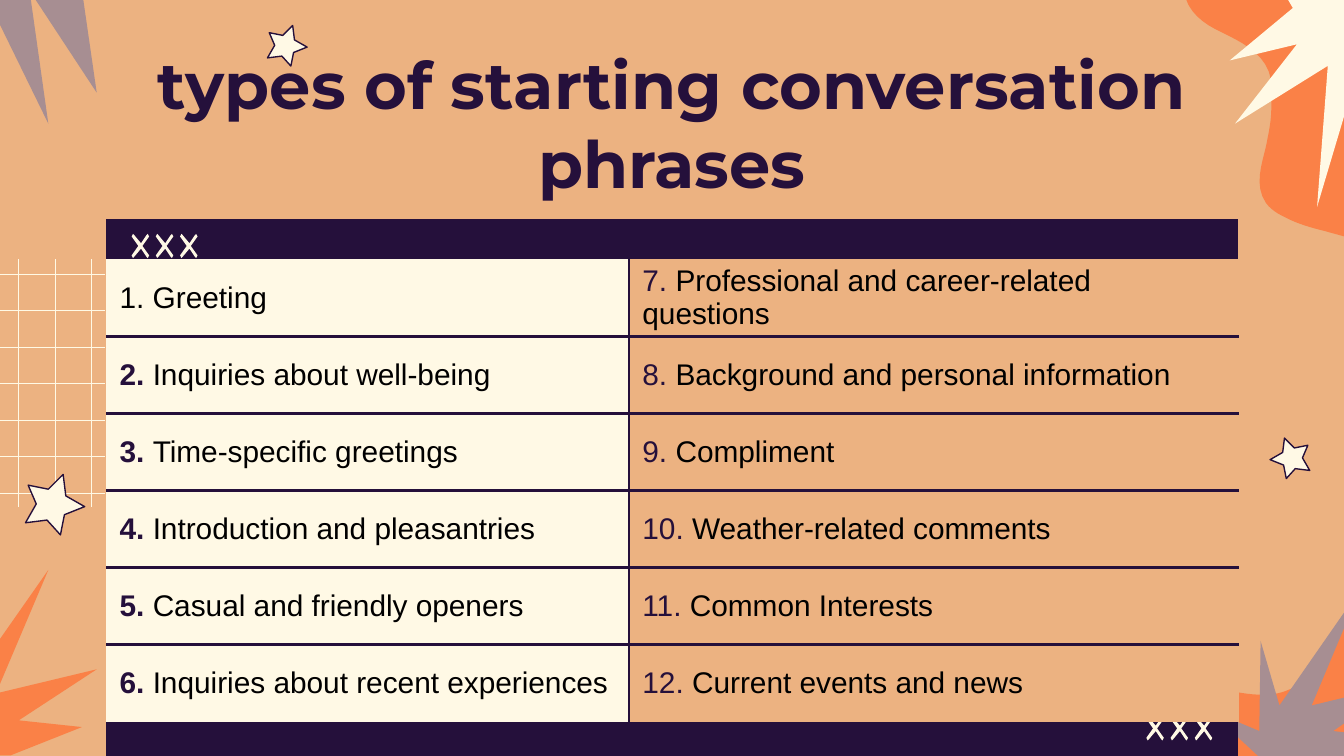
"""Build a slide listing twelve types of conversation starters in a two-column table."""
from dataclasses import dataclass

from lxml import etree
from pptx import Presentation
from pptx.dml.color import RGBColor
from pptx.enum.shapes import MSO_CONNECTOR, MSO_SHAPE
from pptx.enum.text import MSO_ANCHOR, PP_ALIGN
from pptx.oxml.ns import qn
from pptx.util import Inches, Pt

RECTANGLE = MSO_SHAPE.RECTANGLE
STRAIGHT = MSO_CONNECTOR.STRAIGHT
MIDDLE = MSO_ANCHOR.MIDDLE
CENTER = PP_ALIGN.CENTER


@dataclass(frozen=True)
class Theme:
    """Colours, fonts and type sizes of the slide."""
    sand: str = "ECB281"
    cream: str = "FFF9E5"
    orange: str = "FA8147"
    mauve: str = "A78E92"
    plum: str = "25103B"
    black: str = "000000"
    title_font: str = "Montserrat"
    body_font: str = "Arial"
    title_size: int = 35
    body_size: int = 16
    rule: float = 1.5
    outline: float = 0.75
    hairline: float = 0.5


THEME = Theme()
WIDTH = 10
HEIGHT = WIDTH * 9 / 16
PANEL_LEFT, PANEL_TOP = 0.079 * WIDTH, 0.29 * HEIGHT
PANEL_WIDTH, PANEL_HEIGHT = 0.842 * WIDTH, HEIGHT - PANEL_TOP
TABLE_TOP, TABLE_HEIGHT = 1.93, 3.44
COLUMN_WIDTHS = (3.89, 4.54)
CURVE_STEPS = 8

LEFT_PHRASES = ("Greeting", "Inquiries about well-being", "Time-specific greetings",
                "Introduction and pleasantries", "Casual and friendly openers",
                "Inquiries about recent experiences")
RIGHT_PHRASES = ("Professional and career-related questions",
                 "Background and personal information", "Compliment",
                 "Weather-related comments", "Common Interests", "Current events and news")

LOWER_BLOB = [(10.09, 4.59), (9.96, 4.61, 9.88, 4.73, 9.83, 4.84),
              (9.77, 4.96, 9.71, 5.1, 9.57, 5.14), (9.52, 5.16, 9.46, 5.17, 9.4, 5.17),
              (9.3, 5.17, 9.17, 5.15, 9.09, 5.12), (9.02, 5.11, 8.94, 5.09, 8.86, 5.09),
              (8.81, 5.09, 8.76, 5.1, 8.71, 5.13), (8.65, 5.17, 8.62, 5.24, 8.6, 5.3),
              (8.57, 5.37, 8.54, 5.44, 8.52, 5.52), (8.51, 5.59, 8.49, 5.66, 8.47, 5.73),
              (9.95, 5.73), (10.03, 5.73, 10.09, 5.66, 10.09, 5.58)]
UPPER_BLOB = [(8.81, -0.07), (8.83, 0.09, 8.96, 0.18, 9.09, 0.24),
              (9.23, 0.31, 9.38, 0.38, 9.44, 0.53), (9.47, 0.62, 9.46, 0.71, 9.46, 0.8),
              (9.46, 0.9, 9.44, 0.99, 9.42, 1.09), (9.39, 1.22, 9.33, 1.38, 9.42, 1.51),
              (9.47, 1.58, 9.55, 1.61, 9.61, 1.64), (9.7, 1.68, 9.78, 1.7, 9.86, 1.72),
              (9.96, 1.75, 10.06, 1.77, 10.15, 1.81), (10.15, 0.1),
              (10.15, 0, 10.08, -0.07, 9.99, -0.07)]
ORANGE_BURST = [(0.36, 4.24), (-0.2, 5.04), (-0.2, 5.62), (0.08, 5.62), (0.61, 5.41),
                (0.14, 5.36), (0.72, 4.98), (-0.03, 5.16)]
LOWER_MAUVE_BURST = [(10.09, 4.43), (9.52, 5.25), (9.38, 4.77), (9.37, 5.44), (8.99, 5.28),
                     (9.42, 5.68), (9.35, 5.73), (9.87, 5.73), (9.86, 5.68), (10.09, 5.59),
                     (10.09, 5.46), (9.92, 5.44), (10.09, 5.32), (10.09, 5.17),
                     (9.76, 5.25), (10.09, 4.46)]
CREAM_BURST = [(9.55, -0.06), (9.62, 0.06), (9.15, 0.45), (9.65, 0.33), (9.19, 0.92),
               (9.88, 0.49), (9.8, 1.54), (10.14, 0.4), (10.15, 0.41), (10.15, -0.06)]
UPPER_MAUVE_BURST = [(-0.13, -0.28), (-0.21, -0.28, -0.28, -0.21, -0.28, -0.13),
                     (-0.28, 1.23), (-0.25, 1.46), (-0.1, -0.02), (0.36, 0.92),
                     (0.22, -0.07), (0.72, 0.69), (0.58, -0.28)]
STAR = [(0.28, 0), (0.3, 0.16), (0.44, 0.24), (0.29, 0.3), (0.26, 0.45), (0.16, 0.34),
        (0, 0.36), (0.08, 0.22), (0.02, 0.08), (0.17, 0.11)]
CROSS = [(0.01, 0), (0, 0.02), (0.05, 0.09), (0, 0.16), (0.01, 0.18), (0.02, 0.17),
         (0.07, 0.11), (0.11, 0.17), (0.12, 0.18), (0.13, 0.16), (0.08, 0.09),
         (0.13, 0.02), (0.12, 0), (0.11, 0.01), (0.07, 0.07), (0.02, 0.01)]


def rgb(color):
    """Turn a hex string into a colour."""
    return RGBColor.from_string(color)


def flatten(path):
    """Replace each cubic curve of a path by short straight steps."""
    points = []
    for node in path:
        if len(node) == 2:
            points.append(node)
            continue
        controls = [points[-1], node[:2], node[2:4], node[4:]]
        for step in range(1, CURVE_STEPS + 1):
            t = step / CURVE_STEPS
            weights = ((1 - t) ** 3, 3 * t * (1 - t) ** 2, 3 * t * t * (1 - t), t ** 3)
            points.append(tuple(sum(w * c[axis] for w, c in zip(weights, controls))
                                for axis in (0, 1)))
    return points


def paint(shape, fill, line=None):
    """Give a shape a flat fill and an optional outline."""
    shape.shadow.inherit = False
    shape.fill.solid()
    shape.fill.fore_color.rgb = rgb(fill)
    if line:
        shape.line.color.rgb = rgb(line)
        shape.line.width = Pt(THEME.outline)
    else:
        shape.line.fill.background()


def add_outline(slide, path, fill, line=None):
    """Draw a closed outline given in inches."""
    points = [(Inches(x), Inches(y)) for x, y in flatten(path)]
    builder = slide.shapes.build_freeform(*points[0])
    builder.add_line_segments(points[1:], close=True)
    paint(builder.convert_to_shape(), fill, line)


def add_star(slide, left, top, scale, mirrored=False):
    """Draw a tilted star, leaning the other way when mirrored."""
    star = [(left + scale * (0.44 - x if mirrored else x), top + scale * y) for x, y in STAR]
    add_outline(slide, star, THEME.cream, THEME.plum)


def add_crosses(slide, left, top):
    """Draw a row of three crosses."""
    for index in range(3):
        add_outline(slide, [(left + 0.18 * index + x, top + y) for x, y in CROSS], THEME.cream)


def add_hairline(slide, *ends):
    """Draw one thin line of the side grid."""
    hairline = slide.shapes.add_connector(STRAIGHT, *map(Inches, ends))
    hairline.line.color.rgb = rgb(THEME.cream)
    hairline.line.width = Pt(THEME.hairline)
    etree.SubElement(hairline._element.spPr, qn("a:effectLst"))


def add_side_grid(slide):
    """Draw the square grid beside the panel."""
    for column in range(3):
        x = 0.14 + 0.27 * column
        add_hairline(slide, x, 1.93, x, 3.77)
    for row in range(7):
        y = 2.04 + 1.63 * row / 6
        add_hairline(slide, -1.04, y, 0.78, y)


def add_title(slide, text):
    """Write the centred slide title."""
    title = slide.shapes.add_textbox(Inches(PANEL_LEFT), Inches(0.23),
                                     Inches(PANEL_WIDTH), Inches(0.63)).text_frame
    title.word_wrap = True
    title.margin_left = title.margin_right = title.margin_top = title.margin_bottom = Inches(0.1)
    heading = title.paragraphs[0]
    heading.text = text
    heading.alignment = CENTER
    heading.font.name, heading.font.size = THEME.title_font, Pt(THEME.title_size)
    heading.font.bold, heading.font.color.rgb = True, rgb(THEME.plum)


def set_borders(cell, visible):
    """Rule the named sides of a cell and clear the others."""
    properties = cell._tc.get_or_add_tcPr()
    for index, side in enumerate("LRTB"):
        border = etree.Element(qn(f"a:ln{side}"), w=str(Pt(THEME.rule)))
        if side in visible:
            fill = etree.SubElement(border, qn("a:solidFill"))
            etree.SubElement(fill, qn("a:srgbClr"), val=THEME.plum)
        else:
            etree.SubElement(border, qn("a:noFill"))
        properties.insert(index, border)


def fill_cell(cell, number, phrase, fill, number_color, bold):
    """Write a numbered phrase into a table cell."""
    cell.fill.solid()
    cell.fill.fore_color.rgb = rgb(fill)
    cell.vertical_anchor = MIDDLE
    cell.margin_left = cell.margin_right = Inches(0.1)
    cell.margin_top = cell.margin_bottom = 0
    entry = cell.text_frame.paragraphs[0]
    entry.font.name, entry.font.size = THEME.body_font, Pt(THEME.body_size)
    for text, color, weight in ((f"{number}. ", number_color, bold),
                                (phrase, THEME.black, False)):
        run = entry.add_run()
        run.text = text
        run.font.bold, run.font.color.rgb = weight, rgb(color)


def add_phrase_table(slide):
    """Lay out the twelve phrases in two columns."""
    rows = len(LEFT_PHRASES)
    table = slide.shapes.add_table(rows, 2, Inches(PANEL_LEFT), Inches(TABLE_TOP),
                                   Inches(sum(COLUMN_WIDTHS)), Inches(TABLE_HEIGHT)).table
    table.first_row = table.horz_banding = False
    for column, width in zip(table.columns, COLUMN_WIDTHS):
        column.width = Inches(width)
    for column, phrases in enumerate((LEFT_PHRASES, RIGHT_PHRASES)):
        for row, phrase in enumerate(phrases):
            number = column * rows + row + 1
            cell = table.cell(row, column)
            fill_cell(cell, number, phrase, (THEME.cream, THEME.sand)[column],
                      THEME.black if number == 1 else THEME.plum, column == 0 and row > 0)
            set_borders(cell, "RL"[column] + "T" * (row > 0) + "B" * (row < rows - 1))


def main():
    """Assemble and save the slide."""
    deck = Presentation()
    deck.slide_width, deck.slide_height = Inches(WIDTH), Inches(HEIGHT)
    slide = deck.slides.add_slide(deck.slide_layouts[6])
    slide.background.fill.solid()
    slide.background.fill.fore_color.rgb = rgb(THEME.sand)
    add_side_grid(slide)
    for path, fill in ((LOWER_BLOB, THEME.orange), (UPPER_BLOB, THEME.orange),
                       (ORANGE_BURST, THEME.orange), (LOWER_MAUVE_BURST, THEME.mauve),
                       (CREAM_BURST, THEME.cream), (UPPER_MAUVE_BURST, THEME.mauve)):
        add_outline(slide, path, fill)
    add_star(slide, 9.45, 3.26, 0.67, mirrored=True)
    add_star(slide, 1.99, 0.19, 0.67)
    add_star(slide, 0.19, 3.53, 1)
    panel = slide.shapes.add_shape(RECTANGLE, Inches(PANEL_LEFT), Inches(PANEL_TOP),
                                   Inches(PANEL_WIDTH), Inches(PANEL_HEIGHT))
    paint(panel, THEME.plum)
    add_crosses(slide, 0.98, 1.74)
    add_crosses(slide, 8.53, 5.33)
    add_title(slide, "types of starting conversation phrases")
    add_phrase_table(slide)
    deck.save("out.pptx")


if __name__ == "__main__":
    main()
